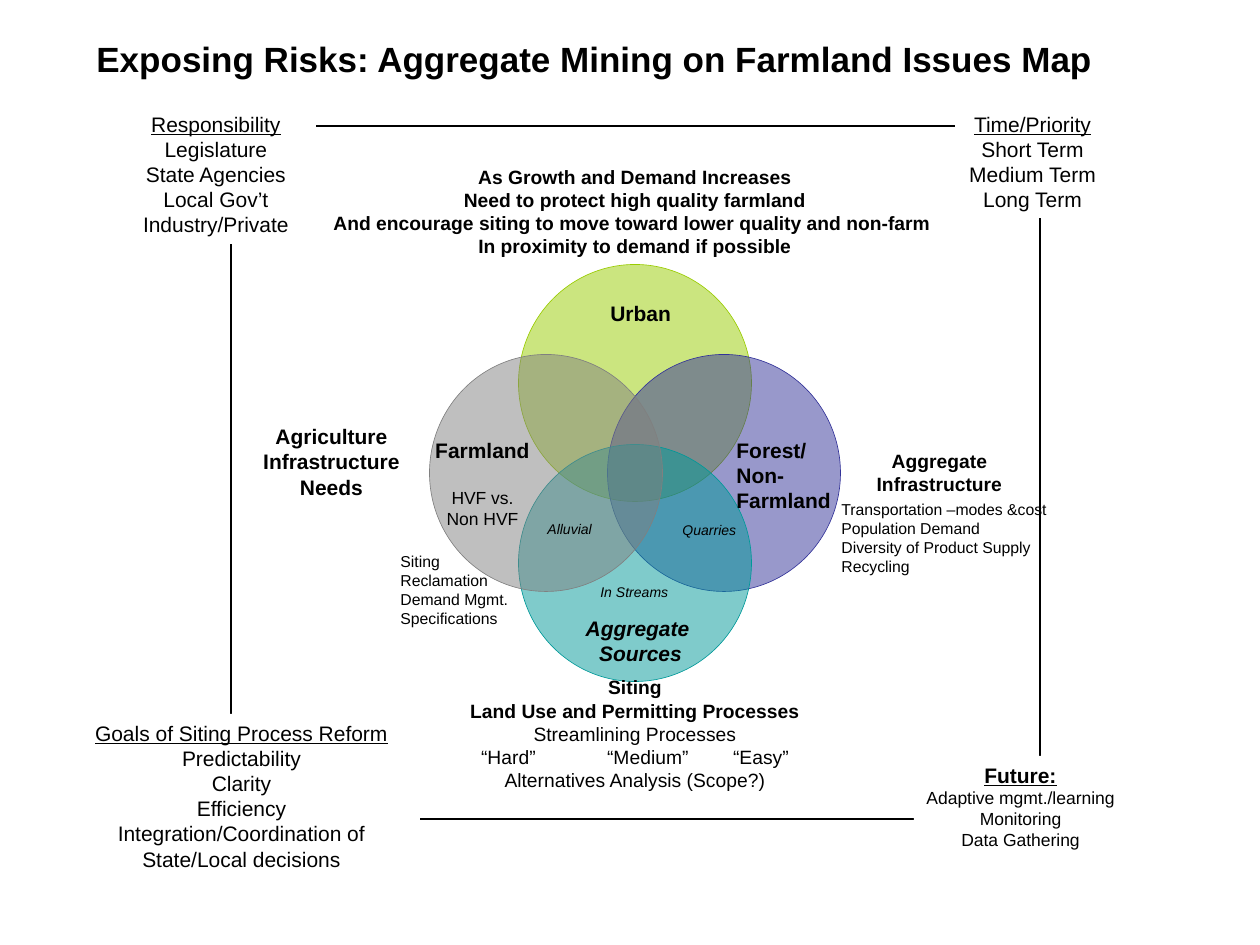
from lxml import etree
from pptx import Presentation
from pptx.dml.color import RGBColor
from pptx.enum.shapes import MSO_SHAPE
from pptx.enum.text import MSO_ANCHOR, MSO_AUTO_SIZE, PP_ALIGN
from pptx.oxml.ns import qn
from pptx.util import Emu, Pt

RECT, OVAL = MSO_SHAPE.RECTANGLE, MSO_SHAPE.OVAL
LEFT, CENTER = PP_ALIGN.LEFT, PP_ALIGN.CENTER
TOP, MIDDLE = MSO_ANCHOR.TOP, MSO_ANCHOR.MIDDLE
GROW, FIXED = MSO_AUTO_SIZE.SHAPE_TO_FIT_TEXT, MSO_AUTO_SIZE.NONE

PX_PER_INCH = 126
BLACK, WHITE = "000000", "FFFFFF"


def px(n):
    return Emu(round(n * 914400 / PX_PER_INCH))


def color(value):
    return RGBColor.from_string(value)


class Deck:
    font = "Arial"

    def __init__(self, width, height):
        self.prs = Presentation()
        self.prs.slide_width, self.prs.slide_height = px(width), px(height)
        self.slide = self.prs.slides.add_slide(self.prs.slide_layouts[6])

    def shape(self, kind, box, line, weight, fill=None, alpha=None):
        sp = self.slide.shapes.add_shape(kind, *map(px, box))
        sp.shadow.inherit = False
        sp.line.color.rgb = color(line)
        sp.line.width = Pt(weight)
        if fill is None:
            sp.fill.background()
            return
        sp.fill.solid()
        sp.fill.fore_color.rgb = color(fill)
        if alpha is not None:
            clr = sp._element.spPr.find(qn("a:solidFill"))[0]
            etree.SubElement(clr, qn("a:alpha")).set("val", str(alpha * 1000))

    def text(self, box, *groups, align=LEFT, wrap=True, fill=None, label=False):
        """Each group is (lines, format values); label means centred, no insets."""
        sp = self.slide.shapes.add_textbox(*map(px, box))
        if fill:
            sp.fill.solid()
            sp.fill.fore_color.rgb = color(fill)
        tf = sp.text_frame
        frame = {"word_wrap": wrap, "auto_size": GROW, "vertical_anchor": TOP}
        if label:
            align = CENTER
            frame.update(auto_size=FIXED, vertical_anchor=MIDDLE,
                         margin_left=0, margin_right=0, margin_top=0, margin_bottom=0)
        for name, value in frame.items():
            setattr(tf, name, value)
        p = None
        for lines, fmt in groups:
            for line in lines:
                p = tf.paragraphs[0] if p is None else tf.add_paragraph()
                p.alignment = align
                if "\t" in line:
                    self.tabs(p, line.count("\t"))
                r = p.add_run()
                r.text = line
                r.font.color.rgb = color(BLACK)
                for name, value in {"name": self.font, **fmt}.items():
                    setattr(r.font, name, value)
        return tf

    def tabs(self, p, count):
        """Tab stops one inch apart."""
        stops = etree.SubElement(p._p.get_or_add_pPr(), qn("a:tabLst"))
        for i in range(1, count + 1):
            tab = etree.SubElement(stops, qn("a:tab"))
            tab.set("pos", str(px(i * PX_PER_INCH)))
            tab.set("algn", "l")

    def save(self):
        self.prs.save("out.pptx")


def style(size, **flags):
    return {"size": Pt(size), **flags}


def main():
    s = Deck(1260, 945)
    heading, bold11, bold12 = style(12, underline=True), style(11, bold=True), style(12, bold=True)
    body, small, note = style(12), style(9), style(8, italic=True)

    # Frame joining the four corner boxes
    s.shape(RECT, (231, 126, 809, 693), BLACK, 0.75)

    # Four overlapping circles around one centre
    cx, cy, dx, dy, w, h = 635, 473, 89, 90, 233, 237
    for ix, iy, fill in ((0, -1, "99CC00"), (1, 0, "333399"),
                         (0, 1, "009999"), (-1, 0, "808080")):
        box = (cx + ix * dx - w / 2, cy + iy * dy - h / 2, w, h)
        s.shape(OVAL, box, fill, 0.37, fill, alpha=50)

    # Labels around the circles
    s.text((315, 182, 640, 59),
           (["As Growth and Demand Increases", "Need to protect high quality farmland",
             "And encourage siting to move toward lower quality and non-farm ",
             "In proximity to demand if possible"], bold11), label=True)
    s.text((864, 443, 151, 59), (["Aggregate", "Infrastructure"], bold11), label=True)
    s.text((435, 704, 400, 59),
           (["Siting", "Land Use and Permitting Processes"], bold11),
           (["Streamlining Processes", "“Hard”\t“Medium”\t“Easy”",
             "Alternatives Analysis (Scope?)"], style(11)), label=True)
    s.text((256, 432, 151, 59), (["Agriculture", "Infrastructure", "Needs"], bold12), label=True)

    # Small notes in the overlaps
    s.text((588, 577, 95, 29), (["In Streams"], note))
    s.text((670, 515, 85, 29), (["Quarries"], note))
    s.text((535, 514, 80, 29), (["Alluvial"], note))

    # Lists beside the circles
    s.text((388, 546, 158, 88),
           (["Siting", "Reclamation", "Demand Mgmt.", "Specifications"], small))
    s.text((829, 494, 231, 88),
           (["Transportation –modes &cost", "Population Demand",
             "Diversity of Product Supply", "Recycling"], small), wrap=False)

    # Corner boxes
    corner = {"align": CENTER, "fill": WHITE}
    s.text((914, 756, 213, 101), (["Future:"], style(12, bold=True, underline=True)),
           (["Adaptive mgmt./learning", "Monitoring", "Data Gathering"], style(10)),
           wrap=False, **corner)
    s.text((63, 714, 357, 164), (["Goals of Siting Process Reform"], heading),
           (["Predictability", "Clarity", "Efficiency",
             "Integration/Coordination of State/Local decisions"], body), **corner)
    s.text((116, 105, 200, 139), (["Responsibility"], heading),
           (["Legislature", "State Agencies", "Local Gov’t", "Industry/Private"], body), **corner)
    s.text((955, 105, 155, 113), (["Time/Priority"], heading),
           (["Short Term", "Medium Term", "Long Term"], body), wrap=False, **corner)

    # Title
    s.text((84, 31, 1029, 55),
           (["Exposing Risks: Aggregate Mining on Farmland Issues Map"], style(20, bold=True)),
           wrap=False)

    # Circle names
    tf = s.text((409, 431, 147, 105), (["Farmland"], bold12),
                (["HVF vs.", "Non HVF"], style(10)), align=CENTER)
    tf.paragraphs[1].space_before = Pt(14)
    s.text((724, 431, 158, 88), (["Forest/", "Non-Farmland"], bold12))
    s.text((598, 294, 87, 38), (["Urban"], bold12))
    s.text((567, 609, 147, 63), (["Aggregate ", "Sources"], style(12, bold=True, italic=True)),
           align=CENTER)

    s.save()


if __name__ == "__main__":
    main()
